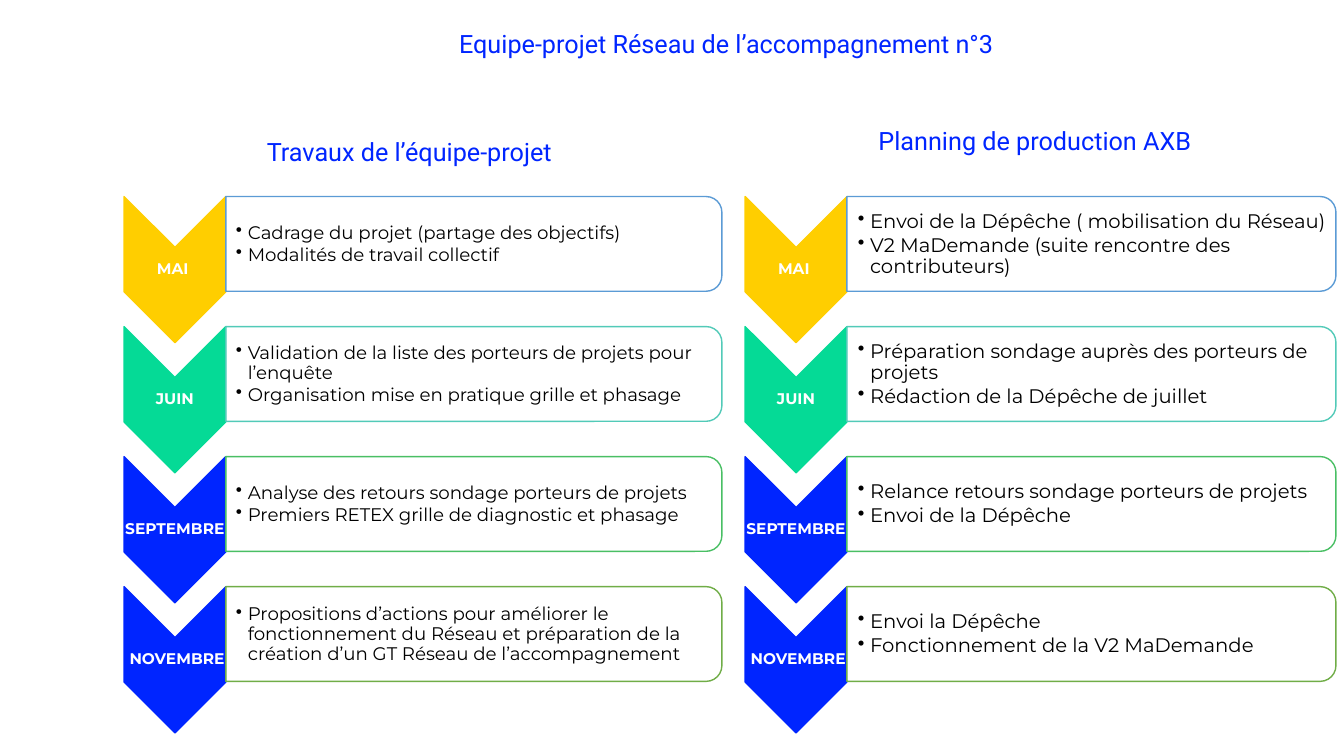
from lxml import etree
from pptx import Presentation
from pptx.dml.color import RGBColor
from pptx.enum import shapes, text
from pptx.oxml import ns
from pptx.util import Inches, Pt

WHITE = RGBColor(0xFF, 0xFF, 0xFF)
BLACK = RGBColor(0, 0, 0)
BLUE = RGBColor(0x00, 0x25, 0xFF)
GOLD = RGBColor(0xFF, 0xCE, 0x00)
MINT = RGBColor(0x05, 0xDA, 0x96)
SKY = RGBColor(0x5B, 0x9B, 0xD5)
TEAL = RGBColor(0x52, 0xCA, 0xB8)
GREEN = RGBColor(0x49, 0xBF, 0x64)
OLIVE = RGBColor(0x70, 0xAD, 0x47)

TOP, STEP = 1.95, 1.29
ARROW_W, ARROW_H = 1.01, 1.45
CARD_H = 0.94

# Month label, arrow colour, card outline
MONTHS = [
    ("MAI ", GOLD, SKY),
    ("JUIN", MINT, TEAL),
    ("SEPTEMBRE", BLUE, GREEN),
    ("\u00a0NOVEMBRE ".replace("\u00a0", " "), BLUE, OLIVE),
]

TEAM = [
    ["Cadrage du projet (partage des objectifs)",
     "Modalités de travail collectif"],
    ["Validation de la liste des porteurs de projets pour l’enquête",
     "Organisation mise en pratique grille et phasage"],
    ["Analyse des retours sondage porteurs de projets",
     "Premiers RETEX grille de diagnostic et phasage"],
    ["Propositions d’actions pour améliorer le fonctionnement du Réseau "
     "et préparation de la création d’un GT Réseau de l’accompagnement"],
]

PLAN = [
    ["Envoi de la Dépêche ( mobilisation du Réseau)",
     "V2 MaDemande (suite rencontre des contributeurs)"],
    ["Préparation sondage auprès des porteurs de projets",
     "Rédaction de la Dépêche de juillet"],
    ["Relance retours sondage porteurs de projets",
     "Envoi de la Dépêche"],
    ["Envoi la Dépêche",
     "Fonctionnement de la V2 MaDemande"],
]


def write(frame, lines, size, color, font="Montserrat", bold=False,
          align=text.PP_ALIGN.CENTER, anchor=text.MSO_ANCHOR.MIDDLE,
          inset=(0.01, 0.01), spacing=0.9, after=0, bullet=False):
    frame.word_wrap = True
    frame.auto_size = text.MSO_AUTO_SIZE.NONE
    frame.vertical_anchor = anchor
    side, edge = inset
    frame.margin_left = Inches(side)
    frame.margin_right = Inches(0.01 if bullet else side)
    frame.margin_top = frame.margin_bottom = Inches(edge)
    for i, line in enumerate(lines):
        para = frame.paragraphs[0] if i == 0 else frame.add_paragraph()
        para.alignment = align
        para.line_spacing = spacing
        para.space_before = Pt(0)
        para.space_after = Pt(after)
        if bullet:
            props = para._p.get_or_add_pPr()
            props.set("marL", str(Inches(0.12)))
            props.set("indent", str(Inches(-0.12)))
            etree.SubElement(props, ns.qn("a:buChar")).set("char", "•")
        run = para.add_run()
        run.text = line
        run.font.name = font
        run.font.size = Pt(size)
        run.font.bold = bold
        run.font.color.rgb = color


def box(slide, x, y, w, h, lines, **style):
    area = slide.shapes.add_textbox(Inches(x), Inches(y), Inches(w), Inches(h))
    write(area.text_frame, lines, **style)


def turned(slide, kind, x, y, w, h, fill, line):
    """Add a shape turned by 90° that covers the given visible area."""
    item = slide.shapes.add_shape(
        kind, Inches(x + (w - h) / 2), Inches(y + (h - w) / 2),
        Inches(h), Inches(w))
    item.rotation = 90
    item.shadow.inherit = False
    item.fill.solid()
    item.fill.fore_color.rgb = fill
    item.line.color.rgb = line
    item.line.width = Pt(1)
    return item


def fade(item, percent):
    color = item.fill._xPr.find(ns.qn("a:solidFill"))[0]
    etree.SubElement(color, ns.qn("a:alpha")).set("val", str(percent * 1000))


def column(slide, x, width, tasks, size, inset):
    for i, ((month, fill, line), items) in enumerate(zip(MONTHS, tasks)):
        y = TOP + i * STEP
        # Month arrow
        turned(slide, shapes.MSO_SHAPE.CHEVRON, x, y, ARROW_W, ARROW_H,
               fill, fill)
        box(slide, x, y + 0.51, ARROW_W, 0.43, [month],
            size=11, color=WHITE, bold=True, after=3.85)
        # Task card
        left = x + ARROW_W
        card = turned(slide, shapes.MSO_SHAPE.ROUND_2_SAME_RECTANGLE,
                      left, y, width, CARD_H, WHITE, line)
        fade(card, 90)
        box(slide, left, y + 0.05, width - 0.05, 0.85, items,
            size=size, color=BLACK, align=text.PP_ALIGN.LEFT,
            inset=(inset, 0.01), after=0.15 * size, bullet=True)


def main():
    deck = Presentation()
    deck.slide_width, deck.slide_height = Inches(13.33), Inches(7.5)
    slide = deck.slides.add_slide(deck.slide_layouts[5])
    head = dict(size=18, color=BLUE, font="Roboto", spacing=1.0,
                anchor=text.MSO_ANCHOR.TOP, inset=(0.1, 0.05))

    # Title
    title = slide.shapes.title
    title.left, title.top = Inches(1.43), Inches(0.23)
    title.width, title.height = Inches(11.61), Inches(0.4)
    write(title.text_frame, ["Equipe-projet Réseau de l’accompagnement n°3 "],
          **head)

    # Column headings
    box(slide, 1.23, 1.3, 5.66, 0.4, ["Travaux de l’équipe-projet"], **head)
    box(slide, 7.48, 1.19, 5.57, 0.4, ["Planning de production AXB"], **head)

    # Month by month columns
    column(slide, 1.23, 4.92, TEAM, 13, 0.1)
    column(slide, 7.39, 4.85, PLAN, 14, 0.11)

    deck.save("out.pptx")


if __name__ == "__main__":
    main()
